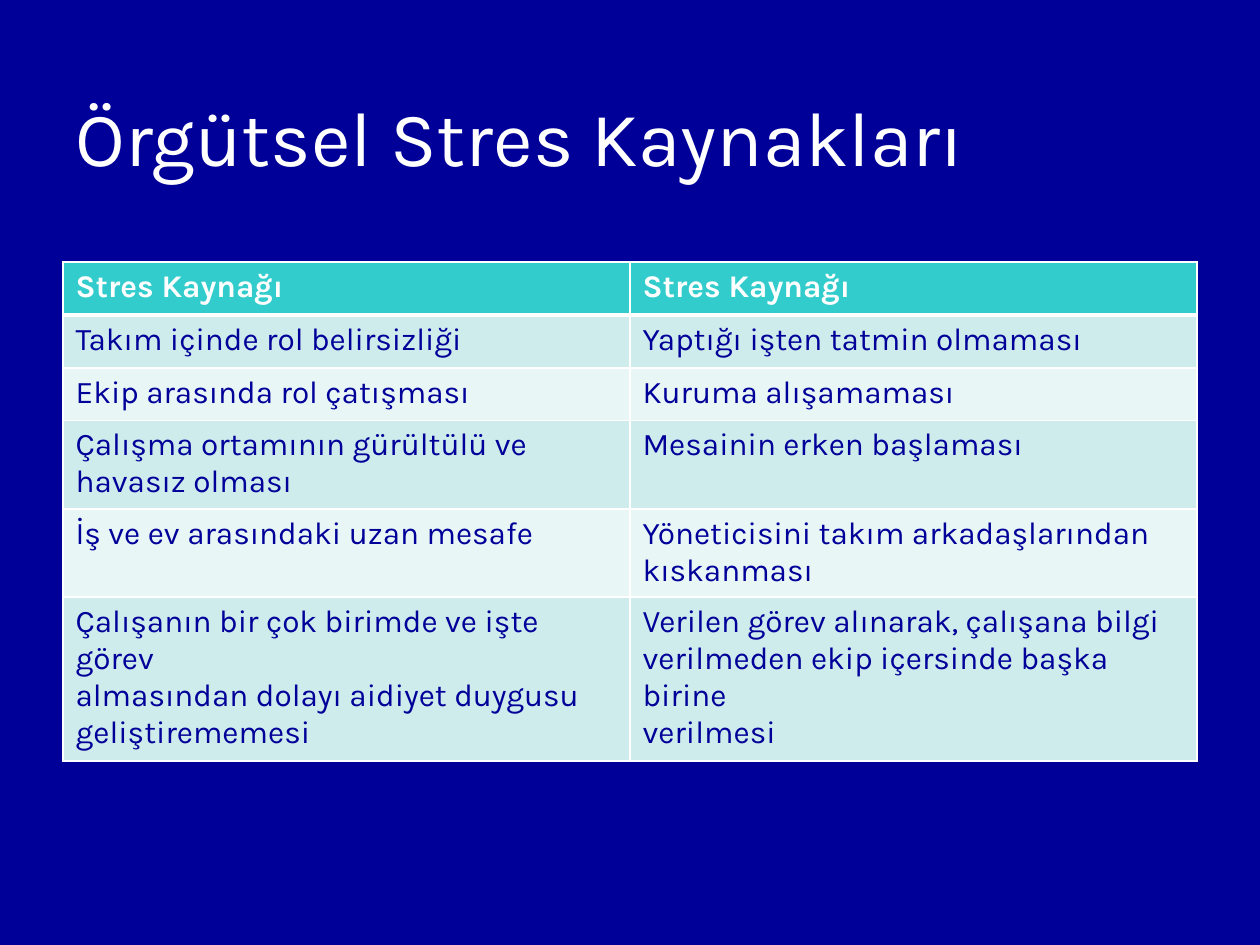
from dataclasses import dataclass

import pptx
import pptx.dml.color
import pptx.enum.text
import pptx.oxml
import pptx.oxml.ns
import pptx.util

Inches = pptx.util.Inches
Pt = pptx.util.Pt


@dataclass(frozen=True)
class Theme:
    font: str = "Karla"
    background: str = "000099"
    white: str = "FFFFFF"
    header_fill: str = "33CCCC"
    body_text: str = "010199"
    bands: tuple = ("CEECEC", "E8F6F6")
    title_size: int = 44
    table_size: int = 18
    border: int = 1
    header_border: int = 3


THEME = Theme()

STRESS_SOURCES = [
    ("Stres Kaynağı", "Stres Kaynağı"),
    ("Takım içinde rol belirsizliği", "Yaptığı işten tatmin olmaması"),
    ("Ekip arasında rol çatışması", "Kuruma alışamaması"),
    ("Çalışma ortamının gürültülü ve havasız olması", "Mesainin erken başlaması"),
    ("İş ve ev arasındaki uzan mesafe", "Yöneticisini takım arkadaşlarından kıskanması"),
    (
        "Çalışanın bir çok birimde ve işte görev\n"
        "almasından dolayı aidiyet duygusu\n"
        "geliştirememesi",
        "Verilen görev alınarak, çalışana bilgi\n"
        "verilmeden ekip içersinde başka birine\n"
        "verilmesi",
    ),
]


def rgb(value):
    return pptx.dml.color.RGBColor.from_string(value)


def fill_solid(fill, color):
    fill.solid()
    fill.fore_color.rgb = rgb(color)


def write_text(frame, text, size, color, bold=False):
    frame.text = text
    for paragraph in frame.paragraphs:
        for span in paragraph.runs:
            span.font.name = THEME.font
            span.font.size = Pt(size)
            span.font.bold = bold
            span.font.color.rgb = rgb(color)


def set_borders(cell, top, bottom):
    """Draw white cell edges; top and bottom are widths in points."""
    properties = cell._tc.get_or_add_tcPr()
    widths = {"lnL": THEME.border, "lnR": THEME.border, "lnT": top, "lnB": bottom}
    for position, (edge, width) in enumerate(widths.items()):
        line = pptx.oxml.parse_xml(
            f'<a:{edge} {pptx.oxml.ns.nsdecls("a")} w="{Pt(width)}">'
            f'<a:solidFill><a:srgbClr val="{THEME.white}"/></a:solidFill></a:{edge}>'
        )
        properties.insert(position, line)


def add_title(page, text):
    box = page.shapes.add_textbox(Inches(0.5), Inches(0.32), Inches(9), Inches(1.51))
    frame = box.text_frame
    frame.word_wrap = True
    frame.vertical_anchor = pptx.enum.text.MSO_ANCHOR.MIDDLE
    write_text(frame, text, THEME.title_size, THEME.white)


def add_stress_table(page, rows):
    row_height = Inches(0.42)
    table = page.shapes.add_table(
        len(rows), len(rows[0]), Inches(0.5), Inches(2.08), Inches(9), row_height * len(rows)
    ).table
    for row_index, texts in enumerate(rows):
        table.rows[row_index].height = row_height
        is_header = row_index == 0
        fill = THEME.header_fill if is_header else THEME.bands[(row_index - 1) % 2]
        color = THEME.white if is_header else THEME.body_text
        top = THEME.header_border if row_index == 1 else THEME.border
        bottom = THEME.header_border if is_header else THEME.border
        for column_index, text in enumerate(texts):
            cell = table.cell(row_index, column_index)
            write_text(cell.text_frame, text, THEME.table_size, color, is_header)
            fill_solid(cell.fill, fill)
            set_borders(cell, top, bottom)


def main():
    deck = pptx.Presentation()
    deck.slide_width = Inches(10)
    deck.slide_height = Inches(7.5)
    page = deck.slides.add_slide(deck.slide_layouts[6])
    fill_solid(page.background.fill, THEME.background)
    add_title(page, "Örgütsel Stres Kaynakları")
    add_stress_table(page, STRESS_SOURCES)
    deck.save("out.pptx")


if __name__ == "__main__":
    main()
